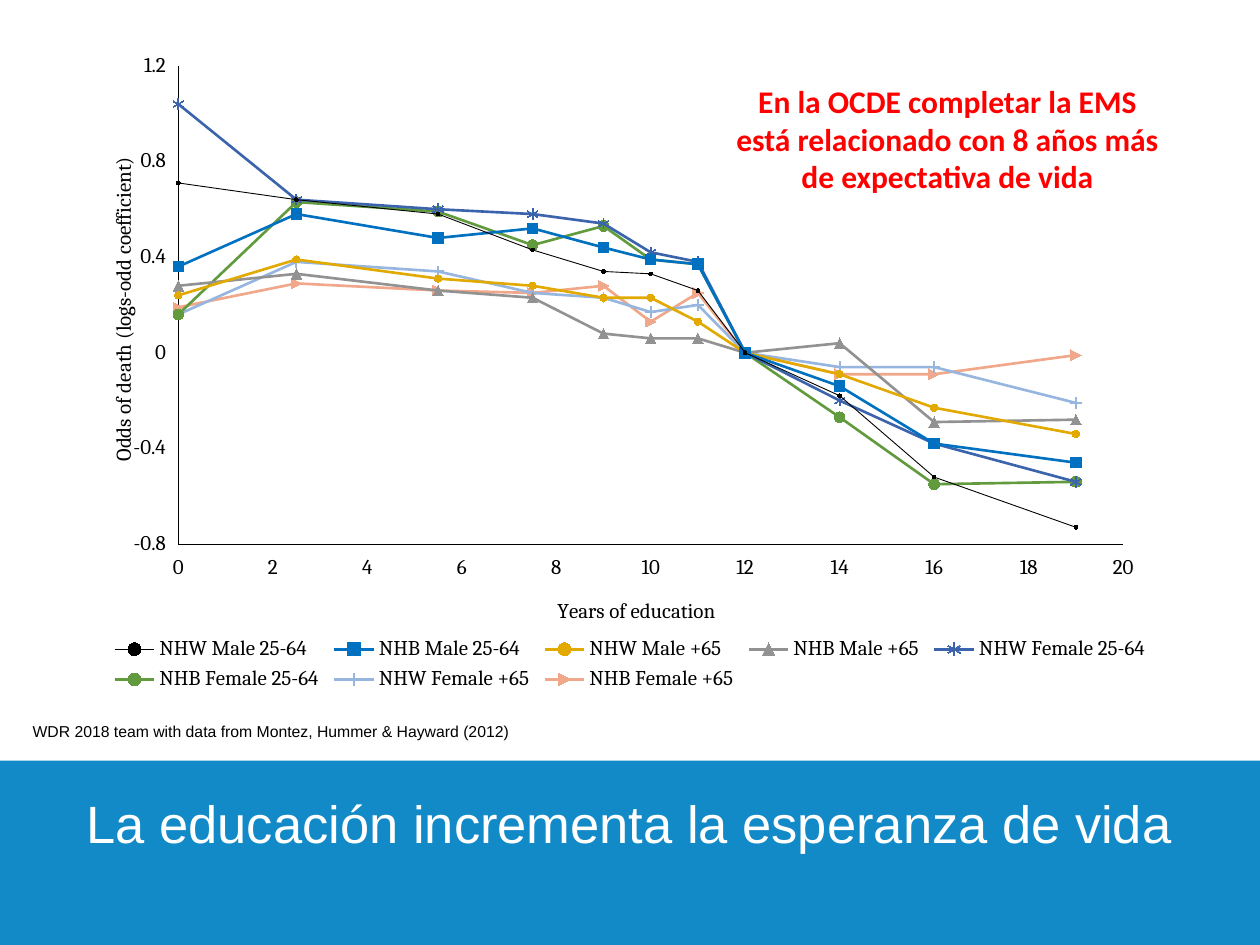
from lxml.etree import SubElement
from pptx import Presentation
from pptx.chart.data import XyChartData
from pptx.dml.color import RGBColor
from pptx.enum.chart import (XL_AXIS_CROSSES, XL_CHART_TYPE, XL_LEGEND_POSITION,
                             XL_MARKER_STYLE, XL_TICK_LABEL_POSITION, XL_TICK_MARK)
from pptx.enum.shapes import MSO_SHAPE
from pptx.enum.text import MSO_ANCHOR, PP_ALIGN
from pptx.oxml.ns import qn
from pptx.util import Inches, Pt

THEME = {
    "band": RGBColor.from_string("118AC7"),
    "axis": RGBColor.from_string("000000"),
    "title": {"name": "Arial", "size": Pt(30), "bold": False, "color": "FFFFFF"},
    "source": {"name": "Arial", "size": Pt(9), "bold": False, "color": "000000"},
    "callout": {"name": "Calibri", "size": Pt(18), "bold": True, "color": "FF0000"},
    "chart": {"name": "Cambria", "size": Pt(12), "bold": False, "color": "000000"},
}

YEARS = [0, 2.5, 5.5, 7.5, 9, 10, 11, 12, 14, 16, 19]
M = XL_MARKER_STYLE
SERIES = [
    ("NHW Male 25-64", "000000", 0.5, M.CIRCLE, 2,
     [0.71, 0.64, 0.58, 0.43, 0.34, 0.33, 0.26, 0, -0.18, -0.52, -0.73]),
    ("NHB Male 25-64", "0070C0", 1.5, M.SQUARE, 6,
     [0.36, 0.58, 0.48, 0.52, 0.44, 0.39, 0.37, 0, -0.14, -0.38, -0.46]),
    ("NHW Male +65", "E2AA00", 1.5, M.CIRCLE, 4,
     [0.24, 0.39, 0.31, 0.28, 0.23, 0.23, 0.13, 0, -0.09, -0.23, -0.34]),
    ("NHB Male +65", "929292", 1.5, M.TRIANGLE, 6,
     [0.28, 0.33, 0.26, 0.23, 0.08, 0.06, 0.06, 0, 0.04, -0.29, -0.28]),
    ("NHW Female 25-64", "3B64AD", 1.5, M.STAR, 6,
     [1.04, 0.64, 0.6, 0.58, 0.54, 0.42, 0.38, 0, -0.2, -0.38, -0.54]),
    ("NHB Female 25-64", "629A3E", 1.5, M.CIRCLE, 6,
     [0.16, 0.63, 0.59, 0.45, 0.53, 0.39, 0.37, 0, -0.27, -0.55, -0.54]),
    ("NHW Female +65", "96B6DF", 1.5, M.PLUS, 6,
     [0.16, 0.38, 0.34, 0.25, 0.23, 0.17, 0.2, 0, -0.06, -0.06, -0.21]),
    ("NHB Female +65", "F1A78A", 1.5, M.DOT, 6,
     [0.19, 0.29, 0.26, 0.25, 0.28, 0.13, 0.25, 0, -0.09, -0.09, -0.01]),
]


def style(font, fmt):
    for key in ("name", "size", "bold"):
        setattr(font, key, fmt[key])
    font.color.rgb = RGBColor.from_string(fmt["color"])


def place(el, shares, inner=False):
    for old in el.findall(qn("c:layout")):
        el.remove(old)
    layout = SubElement(el, qn("c:layout"))
    overlay = el.find(qn("c:overlay"))
    el.insert(0 if overlay is None else el.index(overlay), layout)
    manual = SubElement(layout, qn("c:manualLayout"))
    vals = [("layoutTarget", "inner")] if inner else []
    vals += [("xMode", "edge"), ("yMode", "edge")] + list(zip("xywh", shares))
    for tag, val in vals:
        SubElement(manual, qn("c:" + tag)).set("val", str(val))


prs = Presentation()
prs.slide_width, prs.slide_height = Inches(10), Inches(7.5)
W, H = prs.slide_width, prs.slide_height
s = prs.slides.add_slide(prs.slide_layouts[5])

band = s.shapes.add_shape(MSO_SHAPE.RECTANGLE, 0, int(0.805 * H), W, int(0.195 * H))
band.shadow.inherit = False
band.fill.solid()
band.fill.fore_color.rgb = THEME["band"]
band.line.fill.background()

data = XyChartData()
for name, _, _, _, _, odds in SERIES:
    ser = data.add_series(name)
    for year, odd in zip(YEARS, odds):
        ser.add_data_point(year, odd)
chart = s.shapes.add_chart(XL_CHART_TYPE.XY_SCATTER_LINES, int(0.067 * W), int(0.035 * H),
                           int(0.866 * W), int(0.707 * H), data).chart
style(chart.font, THEME["chart"])
chart.has_title = False
chart.plots[0].vary_by_categories = False

for ser, (_, color, width, marker, size, _) in zip(chart.plots[0].series, SERIES):
    rgb = RGBColor.from_string(color)
    ser.smooth = False
    ser.format.line.width = Pt(width)
    ser.format.line.color.rgb = rgb
    ser.marker.style, ser.marker.size = marker, size
    ser.marker.format.fill.solid()
    ser.marker.format.fill.fore_color.rgb = rgb
    ser.marker.format.line.color.rgb = rgb

AXES = [
    (chart.category_axis, "Years of education", 0, 20, 2, "0", (0.43, 0.84)),
    (chart.value_axis, "Odds of death (logs-odd coefficient)", -0.8, 1.2, 0.4, "-5400000", (0.02, 0.18)),
]
for axis, text, low, high, step, turn, spot in AXES:
    for key, val in {
        "minimum_scale": low, "maximum_scale": high, "major_unit": step,
        "has_major_gridlines": False, "has_minor_gridlines": False,
        "major_tick_mark": XL_TICK_MARK.NONE, "minor_tick_mark": XL_TICK_MARK.NONE,
        "tick_label_position": XL_TICK_LABEL_POSITION.LOW,
        "crosses": XL_AXIS_CROSSES.MINIMUM,
    }.items():
        setattr(axis, key, val)
    axis.tick_labels.number_format = "General"
    axis.tick_labels.number_format_is_linked = False
    axis.format.line.color.rgb = THEME["axis"]
    axis.format.line.width = Pt(0.12)
    tf = axis.axis_title.text_frame
    tf.text = text
    style(tf.paragraphs[0].runs[0].font, THEME["chart"])
    title = axis.axis_title._element
    title.find(".//" + qn("a:bodyPr")).set("rot", turn)
    place(title, spot)

chart.has_legend = True
chart.legend.position = XL_LEGEND_POSITION.BOTTOM
chart.legend.include_in_layout = False
style(chart.legend.font, THEME["chart"])
place(chart.legend._element, (0.02, 0.895, 0.96, 0.1))
place(chart._chartSpace.chart.plotArea, (0.086, 0.049, 0.866, 0.716), True)

title = s.shapes.title
s.shapes._spTree.append(title._element)
source = s.shapes.add_textbox(0, 0, 0, 0)
callout = s.shapes.add_textbox(0, 0, 0, 0)
TEXTS = [
    (title, "title", "La educación incrementa la esperanza de vida",
     (0.037, 0.837, 0.925, 0.075), PP_ALIGN.CENTER, True, MSO_ANCHOR.MIDDLE, 0.9),
    (source, "source", "WDR 2018 team with data from Montez, Hummer & Hayward (2012)",
     (0.016, 0.757, 0.402, 0.033), PP_ALIGN.LEFT, False, MSO_ANCHOR.TOP, 1.0),
    (callout, "callout", "En la OCDE completar la EMS está relacionado con 8 años más de expectativa de vida",
     (0.571, 0.08, 0.362, 0.135), PP_ALIGN.CENTER, True, MSO_ANCHOR.TOP, 1.0),
]
for sp, kind, text, (x, y, w, h), align, wrap, anchor, spacing in TEXTS:
    sp.left, sp.top, sp.width, sp.height = int(x * W), int(y * H), int(w * W), int(h * H)
    tf = sp.text_frame
    tf.word_wrap, tf.vertical_anchor = wrap, anchor
    p = tf.paragraphs[0]
    p.alignment, p.line_spacing = align, spacing
    r = p.add_run()
    r.text = text
    style(r.font, THEME[kind])

prs.save("out.pptx")
